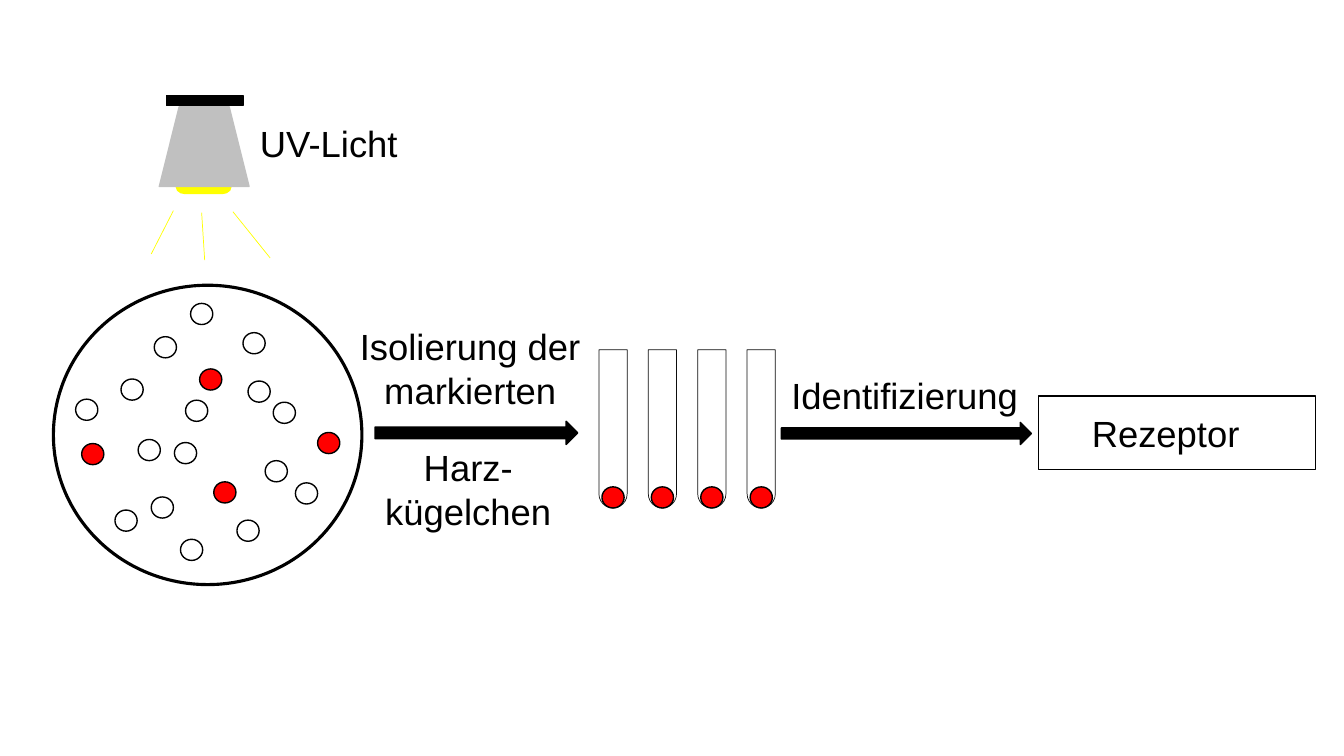
from lxml import etree
from pptx import Presentation
from pptx.dml.color import RGBColor
from pptx.enum.shapes import MSO_CONNECTOR, MSO_SHAPE
from pptx.enum.text import MSO_AUTO_SIZE, PP_ALIGN
from pptx.oxml.ns import qn
from pptx.util import Pt

PX = 9144
ELLIPSE, RECT, ARROW = MSO_SHAPE.OVAL, MSO_SHAPE.RECTANGLE, MSO_SHAPE.RIGHT_ARROW
LENS, HOOD = MSO_SHAPE.FLOWCHART_TERMINATOR, MSO_SHAPE.TRAPEZOID
TUBE = MSO_SHAPE.ROUND_2_SAME_RECTANGLE
STRAIGHT = MSO_CONNECTOR.STRAIGHT
LEFT, CENTER = PP_ALIGN.LEFT, PP_ALIGN.CENTER
FIT = MSO_AUTO_SIZE.SHAPE_TO_FIT_TEXT
COLORS = {"black": "000000", "white": "FFFFFF", "red": "FF0000",
          "yellow": "FFFF00", "gray": "C0C0C0", "glass": "0D0D0D"}

BEADS = [
    (120, 376), (153, 334), (114, 506), (137, 436), (241, 330), (271, 399),
    (184, 397), (150, 493), (75, 396), (246, 378), (235, 516), (293, 479),
    (179, 535), (173, 439), (263, 457), (189, 301),
]
MARKED_BEADS = [(81, 440), (198, 366), (212, 478), (315, 429)]
RAYS = [(231, 210, 268, 256), (172, 209, 150, 252), (200, 211, 203, 258)]


class Diagram:
    font = "Arial"
    size = 26

    def __init__(self, s):
        self.s = s
        self.shapes = s.shapes

    def group(self):
        self.shapes = self.s.shapes.add_group_shape().shapes

    def ungroup(self):
        self.shapes = self.s.shapes

    def color(self, name):
        return RGBColor.from_string(COLORS[name])

    def shape(self, kind, x, y, w, h, fill=None, line="black", width=1):
        sp = self.shapes.add_shape(kind, x * PX, y * PX, w * PX, h * PX)
        sp.shadow.inherit = False
        if fill:
            sp.fill.solid()
            sp.fill.fore_color.rgb = self.color(fill)
        else:
            sp.fill.background()
        sp.line.color.rgb = self.color(line)
        sp.line.width = Pt(width)
        return sp

    def bead(self, x, y, fill):
        self.shape(ELLIPSE, x, y, 22, 21, fill)

    def tube(self, x, y):
        sp = self.shape(TUBE, x, y, 28, 157, line="glass", width=0.5)
        sp.adjustments[0] = 0
        sp.adjustments[1] = 0.5

    def ray(self, x1, y1, x2, y2):
        c = self.shapes.add_connector(STRAIGHT, x1 * PX, y1 * PX, x2 * PX, y2 * PX)
        c.line.color.rgb = self.color("yellow")
        c.line.width = Pt(0.5)
        etree.SubElement(c._element.spPr, qn("a:effectLst"))

    def text(self, x, y, w, h, lines, align=LEFT):
        tf = self.shapes.add_textbox(x * PX, y * PX, w * PX, h * PX).text_frame
        tf.word_wrap = False
        tf.auto_size = FIT
        tf.text = "\n".join(lines)
        for p in tf.paragraphs:
            p.alignment = align
            p.font.name = self.font
            p.font.size = Pt(self.size)
            p.font.color.rgb = self.color("black")


def main():
    prs = Presentation()
    prs.slide_width, prs.slide_height = 1333 * PX, 750 * PX
    d = Diagram(prs.slides.add_slide(prs.slide_layouts[6]))

    d.group()
    d.shape(ELLIPSE, 53, 283, 306, 297, "white", width=2.25)
    for fill, beads in (("white", BEADS), ("red", MARKED_BEADS)):
        for x, y in beads:
            d.bead(x, y, fill)

    d.group()
    d.shape(RECT, 165, 95, 76, 10, "black")
    d.shape(LENS, 175, 179, 54, 13, "yellow", "yellow")
    d.shape(HOOD, 158, 106, 89, 79, "gray", "gray")
    d.text(248, 115, 158, 54, ["UV-Licht"])
    for ray in RAYS:
        d.ray(*ray)

    d.group()
    for i in range(4):
        d.tube(594 + 49 * i, 347)
        d.bead(597 + 49 * i, 483, "red")

    d.ungroup()
    d.shape(ARROW, 372, 418, 201, 23, "black")
    d.text(346, 317, 241, 98, ["Isolierung der", "markierten"], CENTER)
    d.text(371, 437, 187, 98, ["Harz-", "kügelchen"], CENTER)
    d.shape(ARROW, 775, 419, 248, 22, "black")
    d.text(775, 365, 248, 54, ["Identifizierung"])
    d.shape(RECT, 1030, 393, 275, 73)
    d.text(1073, 403, 168, 54, ["Rezeptor"])

    prs.save("out.pptx")


if __name__ == "__main__":
    main()
